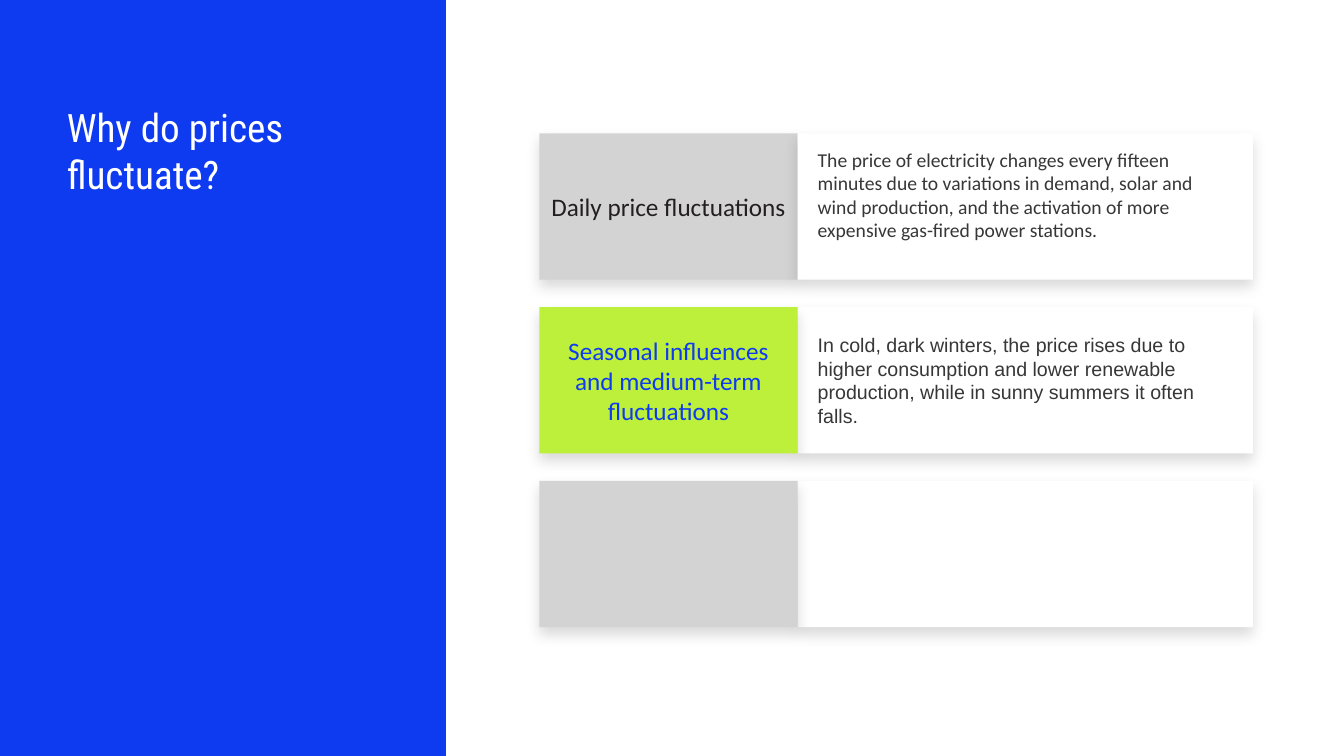
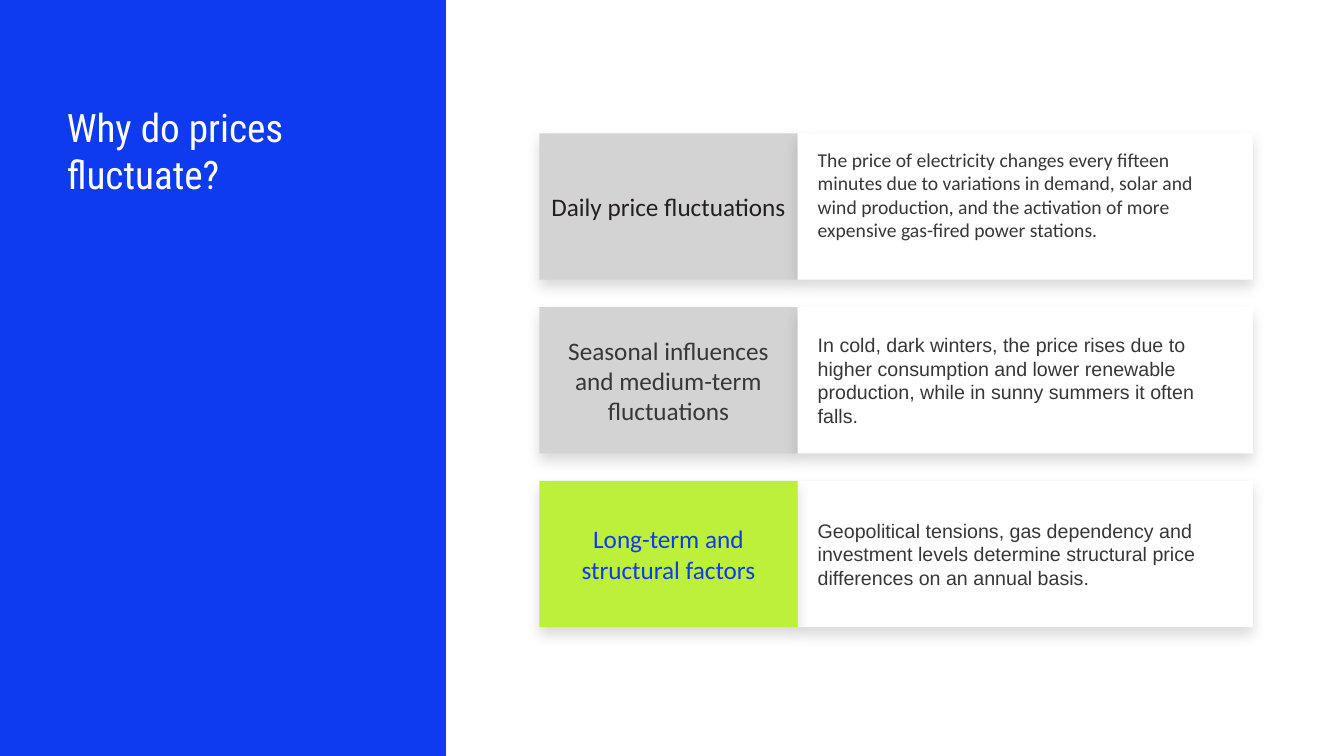
from lxml.etree import SubElement
from pptx import Presentation
from pptx.dml.color import RGBColor
from pptx.enum.shapes import MSO_SHAPE as SHAPE
from pptx.enum.text import MSO_ANCHOR as ANCHOR, MSO_AUTO_SIZE as AUTO, PP_ALIGN as ALIGN
from pptx.oxml.ns import qn
from pptx.util import Pt

WIDTH, HEIGHT = 960, 540
BAND_BOX = (0, 0, 318.5, HEIGHT)
TITLE_BOX = (40.5, 70, 238, 109)
ROWS_BOX = (385.2, 95.25, 509.8, 352.7)
ROW_GAP = 19.6
LABEL_WIDTH = 184.5

BLUE, LIME, GREY, WHITE = "0E3AF0", "BDF03A", "D3D3D3", "FFFFFF"
DARK, TEXT = "231F20", "373737"

TITLE = "Why do prices fluctuate?"
TITLE_FORMAT = dict(size=28, name="Roboto Condensed", color=WHITE)
LABEL_FORMAT = dict(size=18, name="Calibri")
LABEL_INSETS = (5.8, 2.9, 5.8, 2.9)
BODY_INSETS = (14.4, 2.9, 14.4, 2.9)
RAISED_INSETS = (14.4, 2.9, 14.4, 20)

FACTORS = [
    dict(label="Daily price fluctuations", label_color=DARK, font="Calibri",
         insets=RAISED_INSETS,
         body="The price of electricity changes every fifteen minutes due to "
              "variations in demand, solar and wind production, and the "
              "activation of more expensive gas-fired power stations."),
    dict(label="Seasonal influences and medium-term fluctuations",
         label_color=TEXT, font="Arial", insets=BODY_INSETS,
         body="In cold, dark winters, the price rises due to higher "
              "consumption and lower renewable production, while in sunny "
              "summers it often falls."),
    dict(label="Long-term and structural factors", label_color=TEXT,
         font="Arial", insets=BODY_INSETS,
         body="Geopolitical tensions, gas dependency and investment levels "
              "determine structural price differences on an annual basis."),
]


def rgb(value):
    """Turn a hex string into a colour."""
    return RGBColor.from_string(value)


def set_text(tf, text, fmt, insets, anchor, align):
    """Write one formatted paragraph into a text frame."""
    sides = ("margin_left", "margin_top", "margin_right", "margin_bottom")
    settings = dict(zip(sides, map(Pt, insets)), word_wrap=True,
                    auto_size=AUTO.NONE, vertical_anchor=anchor)
    for name, value in settings.items():
        setattr(tf, name, value)
    p = tf.paragraphs[0]
    p.alignment = align
    r = p.add_run()
    r.text = text
    for name, value in fmt.items():
        if name == "color":
            r.font.color.rgb = rgb(value)
        else:
            setattr(r.font, name, Pt(value) if name == "size" else value)


def add_rect(s, box, fill):
    """Add a plain filled rectangle."""
    sp = s.shapes.add_shape(SHAPE.RECTANGLE, *map(Pt, box))
    sp.shadow.inherit = False
    sp.fill.solid()
    sp.fill.fore_color.rgb = rgb(fill)
    sp.line.fill.background()
    return sp


def add_card(s, box, fill):
    """Add a rectangle with a soft shadow below it."""
    sp = add_rect(s, box, fill)
    effects = sp.element.spPr.find(qn("a:effectLst"))
    shadow = SubElement(effects, qn("a:outerShdw"), blurRad=str(Pt(10)),
                        dist=str(Pt(5)), dir="5400000", algn="t",
                        rotWithShape="0")
    color = SubElement(shadow, qn("a:srgbClr"), val="000000")
    SubElement(color, qn("a:alpha"), val="15000")
    return sp


def add_label(s, box, factor, state):
    """Add the heading card of a factor, lit when it is the current one."""
    current = state == "current"
    sp = add_card(s, box, LIME if current else GREY)
    if state != "upcoming":
        color = BLUE if current else factor["label_color"]
        set_text(sp.text_frame, factor["label"], dict(LABEL_FORMAT, color=color),
                 LABEL_INSETS, ANCHOR.MIDDLE, ALIGN.CENTER)


def add_body(s, box, factor, state):
    """Add the explanation card of a factor."""
    sp = add_card(s, box, WHITE)
    if state != "upcoming":
        fmt = dict(size=14, name=factor["font"], color=TEXT)
        set_text(sp.text_frame, factor["body"], fmt, factor["insets"],
                 ANCHOR.MIDDLE, ALIGN.LEFT)


def add_row(s, box, factor, state):
    """Place label and body side by side, with a past label underneath."""
    x, y, w, h = box
    parts = [(add_body, (x + LABEL_WIDTH, y, w - LABEL_WIDTH, h)),
             (add_label, (x, y, LABEL_WIDTH, h))]
    if state == "past":
        parts.reverse()
    for add_part, part_box in parts:
        add_part(s, part_box, factor, state)


def add_rows(s, box, current):
    """Stack the factors at equal gaps and show them up to the current one."""
    x, y, w, h = box
    row_h = (h - ROW_GAP * (len(FACTORS) - 1)) / len(FACTORS)
    for i, factor in enumerate(FACTORS):
        state = ("past" if i < current else
                 "current" if i == current else "upcoming")
        add_row(s, (x, y + i * (row_h + ROW_GAP), w, row_h), factor, state)


def add_title(s, box):
    """Move and format the title placeholder."""
    title = s.shapes.title
    title.left, title.top, title.width, title.height = map(Pt, box)
    set_text(title.text_frame, TITLE, TITLE_FORMAT, (7.2, 3.6, 7.2, 3.6),
             ANCHOR.TOP, ALIGN.LEFT)


def add_band(s, box):
    """Put the blue band at the back of the layout that the slide uses."""
    band = add_rect(s, box, BLUE)
    s.slide_layout.shapes.element.insert(2, band.element)


def add_factor_slide(prs, current):
    """Add a slide that lights up one factor."""
    s = prs.slides.add_slide(prs.slide_layouts[5])
    if current == 1:
        add_band(s, BAND_BOX)
    add_title(s, TITLE_BOX)
    add_rows(s, ROWS_BOX, current)


def main():
    """Build the presentation."""
    prs = Presentation()
    prs.slide_width, prs.slide_height = Pt(WIDTH), Pt(HEIGHT)
    for current in (1, 2):
        add_factor_slide(prs, current)
    prs.save("out.pptx")


if __name__ == "__main__":
    main()
